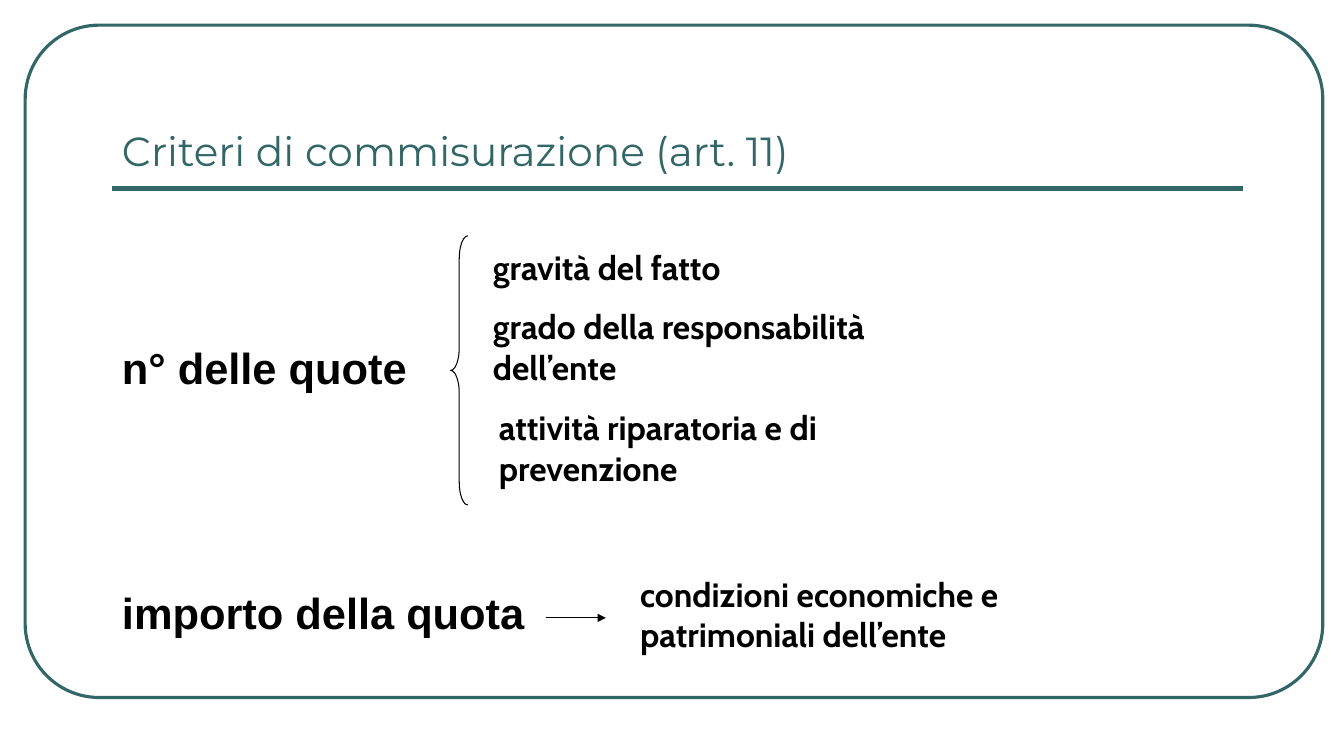
from dataclasses import dataclass
from typing import NamedTuple

from lxml.etree import SubElement
from pptx import Presentation
from pptx.dml.color import RGBColor
from pptx.enum.shapes import MSO_CONNECTOR, MSO_SHAPE
from pptx.enum.text import MSO_ANCHOR, MSO_AUTO_SIZE, PP_ALIGN
from pptx.oxml.ns import qn
from pptx.util import Inches, Pt


@dataclass(frozen=True)
class Theme:
    accent: RGBColor = RGBColor(0x33, 0x66, 0x66)
    ink: RGBColor = RGBColor(0, 0, 0)
    title_font: str = "Montserrat"
    topic_font: str = "Arial"
    detail_font: str = "Cabin"
    title_size: int = 29
    topic_size: int = 31
    detail_size: int = 24


THEME = Theme()


class Box(NamedTuple):
    left: float
    top: float
    width: float
    height: float

    def inner(self, left, top, width, height):
        return Box(self.left + left, self.top + top, width, height)

    def lengths(self):
        return [Inches(value) for value in self]


def place(shape, box):
    shape.left, shape.top, shape.width, shape.height = box.lengths()


def add_run(paragraph, text, font, size, color, bold=False):
    run = paragraph.add_run()
    run.text = text
    run.font.name = font
    run.font.size = Pt(size)
    run.font.color.rgb = color
    run.font.bold = bold


def add_outline(slide, preset, box, color, width, adjustments):
    shape = slide.shapes.add_shape(preset, *box.lengths())
    shape.shadow.inherit = False
    shape.fill.background()
    shape.line.color.rgb = color
    shape.line.width = Pt(width)
    for index, value in enumerate(adjustments):
        shape.adjustments[index] = value


def add_horizontal_line(slide, left, top, width, color, weight, arrow=False):
    line = slide.shapes.add_connector(
        MSO_CONNECTOR.STRAIGHT,
        Inches(left), Inches(top), Inches(left + width), Inches(top),
    )
    line.line.color.rgb = color
    line.line.width = Pt(weight)
    if arrow:
        SubElement(line.line._get_or_add_ln(), qn("a:tailEnd"), type="triangle")
    SubElement(line._element.spPr, qn("a:effectLst"))


def add_detail(slide, box, lines):
    text_box = slide.shapes.add_textbox(*box.lengths())
    frame = text_box.text_frame
    frame.word_wrap = True
    frame.auto_size = MSO_AUTO_SIZE.SHAPE_TO_FIT_TEXT
    for index, text in enumerate(lines):
        paragraph = frame.add_paragraph() if index else frame.paragraphs[0]
        add_run(paragraph, text, THEME.detail_font, THEME.detail_size, THEME.ink, True)


def build_header(slide, box):
    title = slide.shapes.title
    place(title, box)
    frame = title.text_frame
    frame.auto_size = MSO_AUTO_SIZE.NONE
    frame.vertical_anchor = MSO_ANCHOR.BOTTOM
    frame.margin_bottom = Inches(0.1)
    paragraph = frame.paragraphs[0]
    paragraph.alignment = PP_ALIGN.LEFT
    add_run(paragraph, "Criteri di commisurazione (art. 11)",
            THEME.title_font, THEME.title_size, THEME.accent)
    add_horizontal_line(slide, box.left, box.top + box.height + 0.04, box.width,
                        THEME.accent, 3)


def build_topics(slide, box):
    body = slide.placeholders[1]
    place(body, box)
    frame = body.text_frame
    frame.auto_size = MSO_AUTO_SIZE.NONE
    frame.vertical_anchor = MSO_ANCHOR.TOP
    for index, topic in enumerate(["n° delle quote", "importo della quota"]):
        paragraph = frame.add_paragraph() if index else frame.paragraphs[0]
        properties = paragraph._p.get_or_add_pPr()
        properties.set("marL", "0")
        properties.set("indent", "0")
        SubElement(properties, qn("a:buNone"))
        paragraph.space_before = Pt(138 * index)
        add_run(paragraph, topic, THEME.topic_font, THEME.topic_size, THEME.ink, True)


def build_share_count(slide, box):
    add_outline(slide, MSO_SHAPE.LEFT_BRACE, box.inner(0, 0, 0.17, box.height),
                THEME.ink, 0.75, [1.33, 0.5])
    add_detail(slide, box.inner(0.32, 0.06, 3.32, 0.5), ["gravità del fatto"])
    add_detail(slide, box.inner(0.32, 0.65, 4.79, 0.91),
               ["grado della responsabilità", "dell’ente"])
    add_detail(slide, box.inner(0.38, 1.65, 4.17, 0.91),
               ["attività riparatoria e di prevenzione"])


def build_share_amount(slide, box):
    add_horizontal_line(slide, box.left, box.top + 0.49, 0.59, THEME.ink, 0.75, arrow=True)
    add_detail(slide, box.inner(0.83, 0, box.width - 0.83, box.height),
               ["condizioni economiche e", "patrimoniali dell’ente"])


def main():
    presentation = Presentation()
    presentation.slide_width = Inches(13.33)
    presentation.slide_height = Inches(7.5)
    slide = presentation.slides.add_slide(presentation.slide_layouts[1])
    add_outline(slide, MSO_SHAPE.ROUNDED_RECTANGLE, Box(0.25, 0.25, 12.87, 6.67),
                THEME.accent, 2.25, [0.11])
    build_header(slide, Box(1.11, 0.58, 11.22, 1.25))
    build_topics(slide, Box(1.11, 3.33, 11.22, 3.17))
    build_share_count(slide, Box(4.47, 2.34, 5.11, 2.67))
    build_share_amount(slide, Box(5.42, 5.64, 5.71, 0.91))
    presentation.save("out.pptx")


if __name__ == "__main__":
    main()
